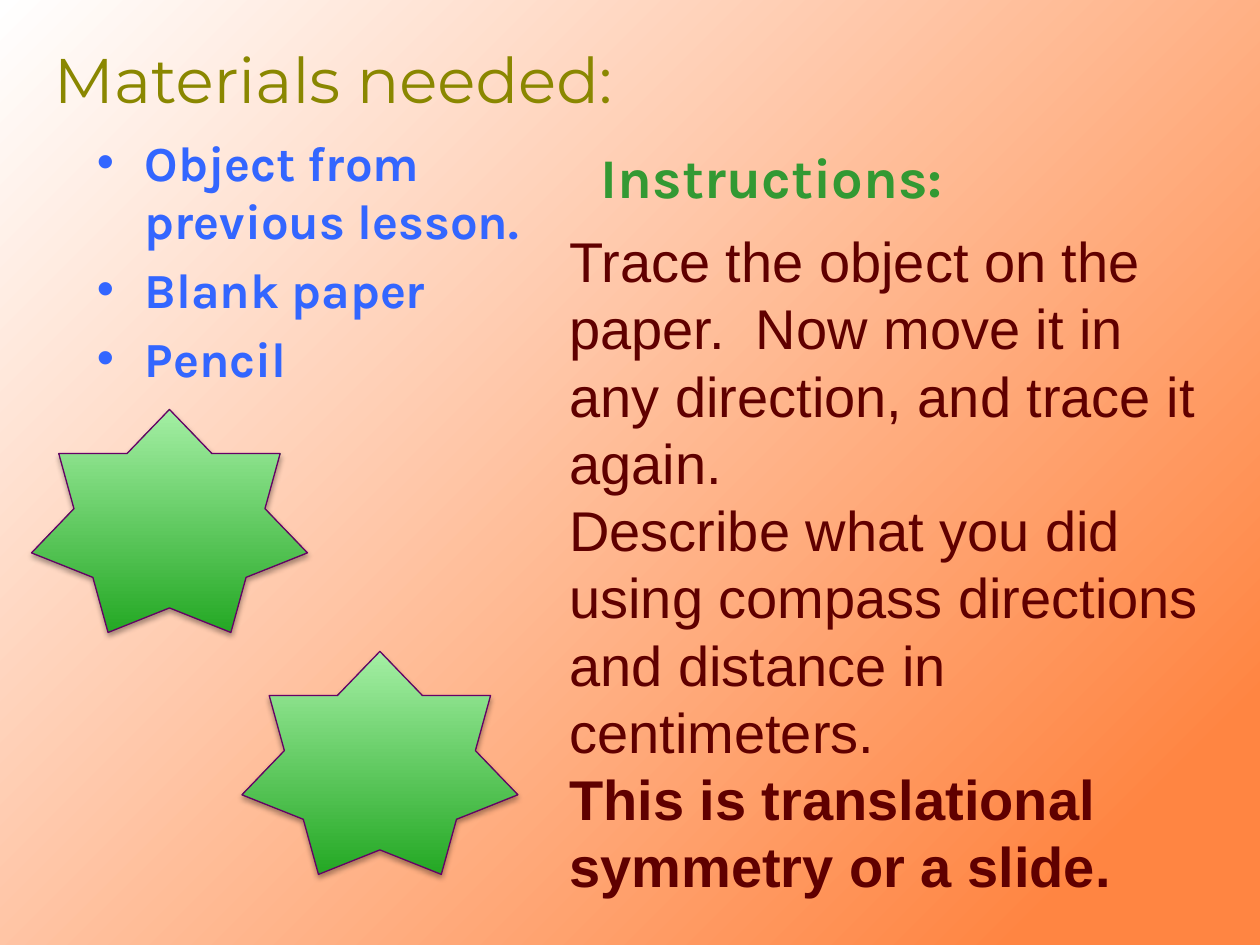
import lxml.etree
import pptx
import pptx.dml.color
import pptx.enum.shapes
import pptx.enum.text
import pptx.oxml
import pptx.oxml.ns
import pptx.util
from dataclasses import dataclass

Inches, Pt = pptx.util.Inches, pptx.util.Pt
qn = pptx.oxml.ns.qn


@dataclass(frozen=True)
class Theme:
    # text styles: font, size, colour, bold
    title = ("Montserrat", 36, "8A8700", False)
    materials = ("Karla", 28, "3366FF", True)
    heading = ("Karla", 32, "339933", True)
    steps = ("Arial", 32, "600000", False)
    conclusion = ("Arial", 32, "600000", True)
    background = ((11, "FF8542"), (100, "FFFFFF"))
    star = ((0, "24A824"), (100, "A4EFA4"))
    star_line = "660066"
    shadow = "000000"


THEME = Theme()
WIDTH, HEIGHT = 10, 7.5
HANG = 0.38

# Content: box, style and paragraphs of each text
TITLE = "Materials needed:"
MATERIALS = ["Object from previous lesson.", "Blank paper", "Pencil"]
HEADING = "Instructions:"
STEPS = [
    "Trace the object on the paper.  Now move it in any direction, and trace it again.",
    "Describe what you did using compass directions and distance in centimeters.",
]
CONCLUSION = "This is translational symmetry or a slide."

# Column lefts and the slide of the star, as (x, y)
MARGIN, LIST_LEFT, STEPS_LEFT, HEADING_LEFT = 0.33, 0.67, 4.42, 4.67
STAR_START, STAR_SIZE, STAR_MOVE = (0.25, 3.25), (2.19, 1.77), (1.67, 1.92)


def rgb(value):
    return pptx.dml.color.RGBColor.from_string(value)


def add_xml(parent, tag, **attributes):
    child = lxml.etree.SubElement(parent, qn(tag))
    for key, value in attributes.items():
        child.set(key, str(value))
    return child


def set_gradient(fill, stops):
    fill.gradient()
    for stop, (position, colour) in zip(fill.gradient_stops, stops):
        stop.position = position / 100
        stop.color.rgb = rgb(colour)


def add_text(slide, box, paragraphs, anchor=pptx.enum.text.MSO_ANCHOR.TOP,
             hanging=False, bullet=None):
    frame = slide.shapes.add_textbox(*map(Inches, box)).text_frame
    frame.word_wrap = True
    frame.vertical_anchor = anchor
    for index, (text, style) in enumerate(paragraphs):
        paragraph = frame.add_paragraph() if index else frame.paragraphs[0]
        paragraph.text = text
        if hanging:
            properties = paragraph._p.get_or_add_pPr()
            properties.set("marL", str(Inches(HANG)))
            properties.set("indent", str(-Inches(HANG)))
            add_xml(add_xml(properties, "a:spcBef"), "a:spcPct", val=20000)
            if bullet:
                add_xml(properties, "a:buFont", typeface="Arial")
                add_xml(properties, "a:buChar", char=bullet)
        font = paragraph.font
        font.name, size, colour, font.bold = style
        font.size = Pt(size)
        font.color.rgb = rgb(colour)


def add_star(slide, left, top):
    star = slide.shapes.add_shape(pptx.enum.shapes.MSO_SHAPE.STAR_7_POINT,
                                  *map(Inches, (left, top, *STAR_SIZE)))
    set_gradient(star.fill, THEME.star)
    star.fill.gradient_angle = 90
    star.line.color.rgb = rgb(THEME.star_line)
    star.line.width = Pt(0.75)
    # Soft shadow straight below
    star.shadow.inherit = False
    effects = star._element.spPr.find(qn("a:effectLst"))
    shadow = add_xml(effects, "a:outerShdw", blurRad=Pt(3.1), dist=Pt(1.8),
                     dir=90 * 60000, rotWithShape=0)
    add_xml(add_xml(shadow, "a:srgbClr", val=THEME.shadow), "a:alpha", val=35000)


def set_background(slide):
    # Glow that spreads from the bottom right corner
    fill = slide.background.fill
    set_gradient(fill, THEME.background)
    gradient = slide._element.find(".//" + qn("a:gradFill"))
    gradient.remove(gradient.find(qn("a:lin")))
    glow = add_xml(gradient, "a:path", path="circle")
    add_xml(glow, "a:fillToRect", l=100000, t=100000)


def main():
    deck = pptx.Presentation()
    deck.slide_width, deck.slide_height = Inches(WIDTH), Inches(HEIGHT)
    slide = deck.slides.add_slide(deck.slide_layouts[6])
    set_background(slide)

    # Left column: title and materials
    add_text(slide, (MARGIN, 0.25, 8.42, 0.75), [(TITLE, THEME.title)],
             anchor=pptx.enum.text.MSO_ANCHOR.MIDDLE)
    add_text(slide, (LIST_LEFT, 1, 4.12, 2.33),
             [(item, THEME.materials) for item in MATERIALS],
             hanging=True, bullet="•")

    # Right column: instructions
    add_text(slide, (HEADING_LEFT, 1.08, 4.12, 0.75), [(HEADING, THEME.heading)],
             hanging=True)
    add_text(slide, (STEPS_LEFT, 1.75, 5.42, 5.49),
             [(step, THEME.steps) for step in STEPS] + [(CONCLUSION, THEME.conclusion)])

    # The star before and after its translation
    for moves in range(2):
        add_star(slide, *(start + moves * move
                          for start, move in zip(STAR_START, STAR_MOVE)))

    deck.save("out.pptx")


if __name__ == "__main__":
    main()
